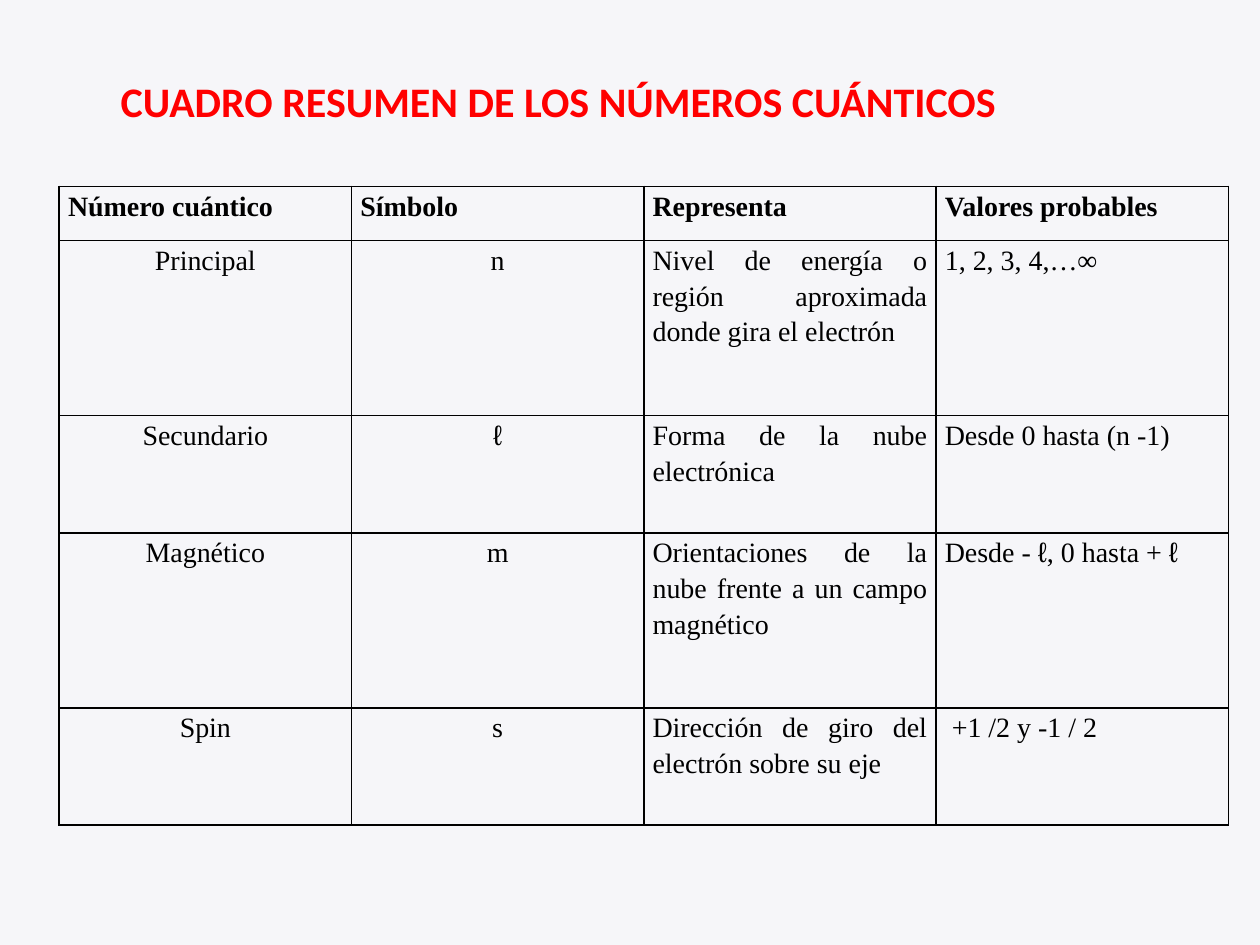
"""Builds a slide with a summary table of the four quantum numbers."""
from itertools import groupby

from lxml.etree import SubElement
from pptx import Presentation
from pptx.dml.color import RGBColor
from pptx.enum.text import PP_ALIGN as Align
from pptx.oxml.ns import qn
from pptx.util import Inches, Pt

TITLE = "CUADRO RESUMEN DE LOS NÚMEROS CUÁNTICOS"
ROWS = [
    ("Número cuántico", "Símbolo", "Representa", "Valores probables"),
    ("Principal", "n", "Nivel de energía o región aproximada donde gira el electrón", "1, 2, 3, 4,…∞"),
    ("Secundario", "ℓ", "Forma de la nube electrónica", "Desde 0 hasta (n -1)"),
    ("Magnético", "m", "Orientaciones de la nube frente a un campo magnético", "Desde - ℓ, 0 hasta + ℓ"),
    ("Spin", "s", "Dirección de giro del electrón sobre su eje", " +1 /2 y -1 / 2"),
]
ROW_HEIGHTS = [0.43, 1.39, 0.93, 1.39, 0.93]
COLUMN_WIDTH = 2.32
CENTRED_COLUMNS = 2
BACKGROUND, RED, BLACK = "F6F6F9", "FF0000", "000000"


def color(hex_string):
    return RGBColor.from_string(hex_string)


def style_font(font, size, hex_string, bold):
    font.size, font.bold = Pt(size), bold
    font.color.rgb = color(hex_string)


def add_borders(cell):
    properties = cell._tc.get_or_add_tcPr()
    for position, side in enumerate(("a:lnL", "a:lnR", "a:lnT", "a:lnB")):
        line = SubElement(properties, qn(side), w=str(Pt(1)))
        properties.insert(position, line)
        fill = SubElement(line, qn("a:solidFill"))
        SubElement(fill, qn("a:srgbClr"), val=BLACK)


def fill_cell(cell, text, header, centred):
    cell.margin_left = cell.margin_right = Inches(0.07)
    cell.margin_top = cell.margin_bottom = 0
    cell.fill.background()
    add_borders(cell)
    paragraph = cell.text_frame.paragraphs[0]
    paragraph.alignment = Align.CENTER if centred else Align.JUSTIFY
    paragraph.line_spacing = 1.15
    style_font(paragraph.font, 16, BLACK, header)
    for is_script, letters in groupby(text, lambda letter: letter == "ℓ"):
        run = paragraph.add_run()
        run.text = "".join(letters)
        run.font.name = "Arial" if is_script else "Times New Roman"
        style_font(run.font, 16, BLACK, header)


def add_title(slide):
    box = slide.shapes.add_textbox(Inches(0.86), Inches(0.55), Inches(8.82), Inches(0.81))
    box.text_frame.word_wrap = True
    paragraph = box.text_frame.paragraphs[0]
    paragraph.text = TITLE
    paragraph.font.name = "Calibri"
    style_font(paragraph.font, 24, RED, True)


def add_summary(slide):
    columns = len(ROWS[0])
    frame = slide.shapes.add_table(len(ROWS), columns, Inches(0.47), Inches(1.48),
                                   Inches(COLUMN_WIDTH * columns), Inches(sum(ROW_HEIGHTS)))
    table = frame.table
    table.first_row = table.horz_banding = False
    for column in table.columns:
        column.width = Inches(COLUMN_WIDTH)
    for r, (texts, height) in enumerate(zip(ROWS, ROW_HEIGHTS)):
        table.rows[r].height = Inches(height)
        for c, text in enumerate(texts):
            fill_cell(table.cell(r, c), text, r == 0, r > 0 and c < CENTRED_COLUMNS)


def main():
    presentation = Presentation()
    presentation.slide_width, presentation.slide_height = Inches(10), Inches(7.5)
    slide = presentation.slides.add_slide(presentation.slide_layouts[6])
    slide.background.fill.solid()
    slide.background.fill.fore_color.rgb = color(BACKGROUND)
    add_title(slide)
    add_summary(slide)
    presentation.save("out.pptx")


if __name__ == "__main__":
    main()
